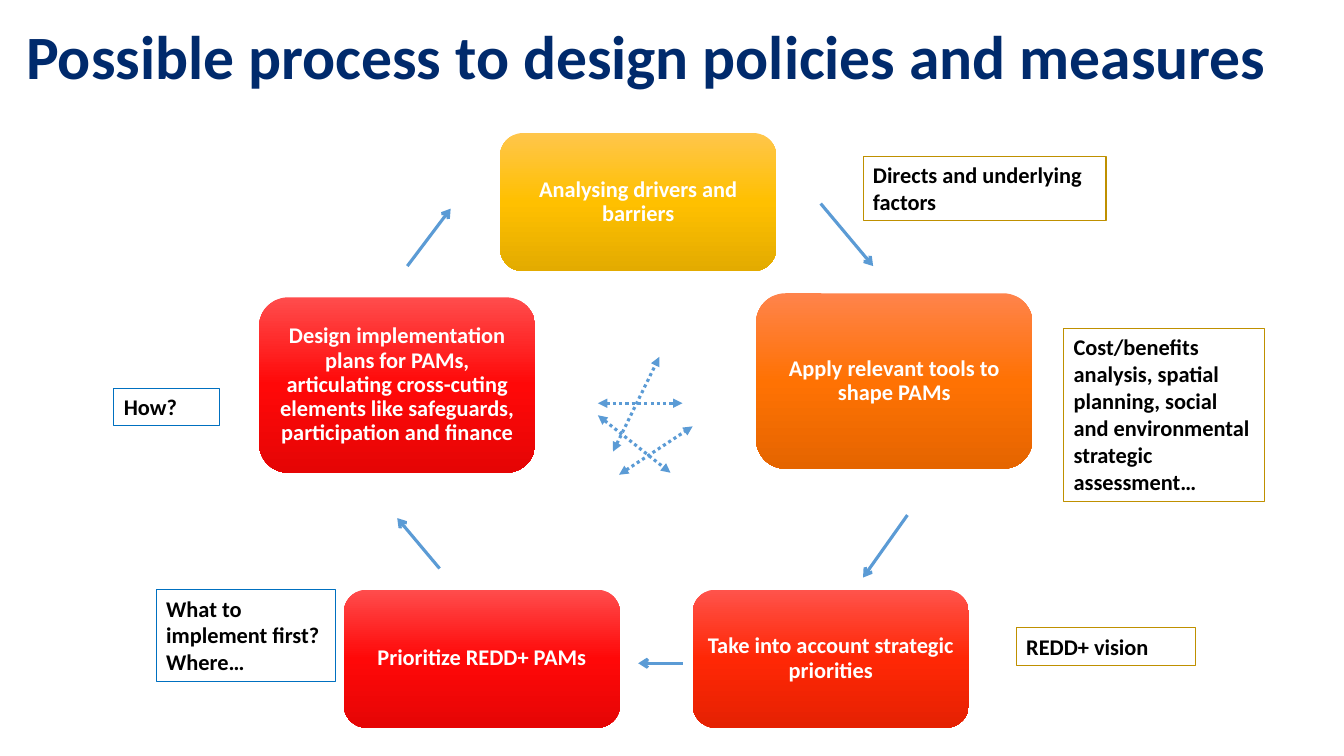
from copy import deepcopy
from dataclasses import dataclass

from lxml.etree import SubElement
from pptx import Presentation
from pptx.dml.color import RGBColor
from pptx.enum.dml import MSO_LINE
from pptx.enum.shapes import MSO_CONNECTOR, MSO_SHAPE
from pptx.enum.text import MSO_ANCHOR, MSO_AUTO_SIZE, PP_ALIGN
from pptx.oxml.ns import qn
from pptx.util import Inches, Pt


@dataclass(frozen=True)
class Theme:
    font: str = "Calibri"
    title_size: int = 44
    text_size: int = 16
    title: str = "002A6C"
    on_step: str = "FFFFFF"
    note_text: str = "000000"
    arrow: str = "5B9BD5"
    gold: str = "BF9000"
    blue: str = "0070C0"
    amber: tuple = ("FFC64B", "FFC000", "E3AB00")
    orange: tuple = ("FF834B", "FF7203", "E56500")
    vermilion: tuple = ("FF534B", "FF2705", "E52102")
    red: tuple = ("FF4C4C", "FF0808", "E50505")


THEME = Theme()
STEP_W, STEP_H, SIDE_H = 2.74, 1.37, 1.74

# Steps of the cycle, clockwise: text, left, top, height, gradient
STEPS = [
    ("Analysing drivers and barriers", 4.96, 1.32, STEP_H, THEME.amber),
    ("Apply relevant tools to shape PAMs", 7.5, 2.91, SIDE_H, THEME.orange),
    ("Take into account strategic priorities", 6.87, 5.85, STEP_H, THEME.vermilion),
    ("Prioritize REDD+ PAMs", 3.41, 5.85, STEP_H, THEME.red),
    ("Design implementation plans for PAMs, articulating cross-cuting elements "
     "like safeguards, participation and finance", 2.57, 2.95, SIDE_H, THEME.red),
]
# Notes beside the steps: text, box, outline
NOTES = [
    ("Directs and underlying factors", (8.56, 1.55, 2.41, 0.64), THEME.gold),
    ("Cost/benefits analysis, spatial planning, social and environmental "
     "strategic assessment…", (10.55, 3.26, 1.99, 1.72), THEME.gold),
    ("REDD+ vision", (10.08, 6.23, 1.78, 0.37), THEME.gold),
    ("What to implement first? Where…", (1.55, 5.85, 1.78, 0.91), THEME.blue),
    ("How?", (1.13, 3.85, 1.05, 0.37), THEME.blue),
]
# Arrows as x1, y1, x2, y2
CYCLE_ARROWS = [
    (8.14, 2.02, 8.66, 2.64),
    (9, 5.11, 8.56, 5.73),
    (6.77, 6.58, 6.33, 6.58),
    (4.36, 5.64, 3.94, 5.14),
    (4.04, 2.64, 4.47, 2.07),
]
CROSS_LINKS = [
    (5.93, 4, 6.77, 4),
    (6.08, 4.48, 6.54, 3.54),
    (5.93, 4.12, 6.65, 4.69),
    (6.14, 4.71, 6.87, 4.23),
]


def rgb(value):
    return RGBColor.from_string(value)


def write(shape, text, size, color, align=PP_ALIGN.LEFT, spacing=None):
    tf = shape.text_frame
    tf.word_wrap = True
    tf.auto_size = MSO_AUTO_SIZE.NONE
    tf.vertical_anchor = MSO_ANCHOR.MIDDLE
    p = tf.paragraphs[0]
    p.text = text
    p.alignment = align
    p.line_spacing = spacing
    p.font.name = THEME.font
    p.font.size = Pt(size)
    p.font.bold = True
    p.font.color.rgb = rgb(color)
    return tf


def add_title(slide, text, box):
    title = slide.shapes.title
    title.left, title.top, title.width, title.height = map(Inches, box)
    write(title, text, THEME.title_size, THEME.title, spacing=0.9)


def fill_gradient(shape, colors):
    shape.fill.gradient()
    shape.fill.gradient_angle = 270
    stops = shape._element.spPr.find(qn("a:gradFill")).find(qn("a:gsLst"))
    stops.append(deepcopy(stops[-1]))
    for i, (stop, color) in enumerate(zip(shape.fill.gradient_stops, colors)):
        stop.position = i / 2
        stop.color.rgb = rgb(color)


def add_step(slide, text, box, colors):
    sp = slide.shapes.add_shape(MSO_SHAPE.ROUNDED_RECTANGLE, *map(Inches, box))
    sp.shadow.inherit = False
    fill_gradient(sp, colors)
    sp.line.fill.background()
    tf = write(sp, text, THEME.text_size, THEME.on_step, PP_ALIGN.CENTER, 0.9)
    tf.margin_left = tf.margin_right = tf.margin_top = tf.margin_bottom = Inches(0.06)


def add_note(slide, text, box, outline):
    sp = slide.shapes.add_textbox(*map(Inches, box))
    sp.line.color.rgb = rgb(outline)
    sp.line.width = Pt(0.75)
    tf = write(sp, text, THEME.text_size, THEME.note_text)
    tf.vertical_anchor = MSO_ANCHOR.TOP


def add_arrow(slide, ends, tail, head=None):
    line = slide.shapes.add_connector(MSO_CONNECTOR.STRAIGHT, *map(Inches, ends))
    line.line.color.rgb = rgb(THEME.arrow)
    line.line.width = Pt(2.25)
    if head:
        line.line.dash_style = MSO_LINE.ROUND_DOT
    ln = line.line._get_or_add_ln()
    if head:
        SubElement(ln, qn("a:headEnd"), type=head)
    SubElement(ln, qn("a:tailEnd"), type=tail)
    SubElement(line._element.spPr, qn("a:effectLst"))


def main():
    prs = Presentation()
    prs.slide_width, prs.slide_height = Inches(13.33), Inches(7.5)
    slide = prs.slides.add_slide(prs.slide_layouts[5])

    add_title(slide, "Possible process to design policies and measures",
              (0.16, 0, 12.99, 1.18))

    # Cycle of steps
    for text, left, top, height, colors in STEPS:
        add_step(slide, text, (left, top, STEP_W, height), colors)
    for ends in CYCLE_ARROWS:
        add_arrow(slide, ends, "arrow")

    # Notes and links across the centre
    for note in NOTES:
        add_note(slide, *note)
    for ends in CROSS_LINKS:
        add_arrow(slide, ends, "triangle", "triangle")

    prs.save("out.pptx")


if __name__ == "__main__":
    main()
